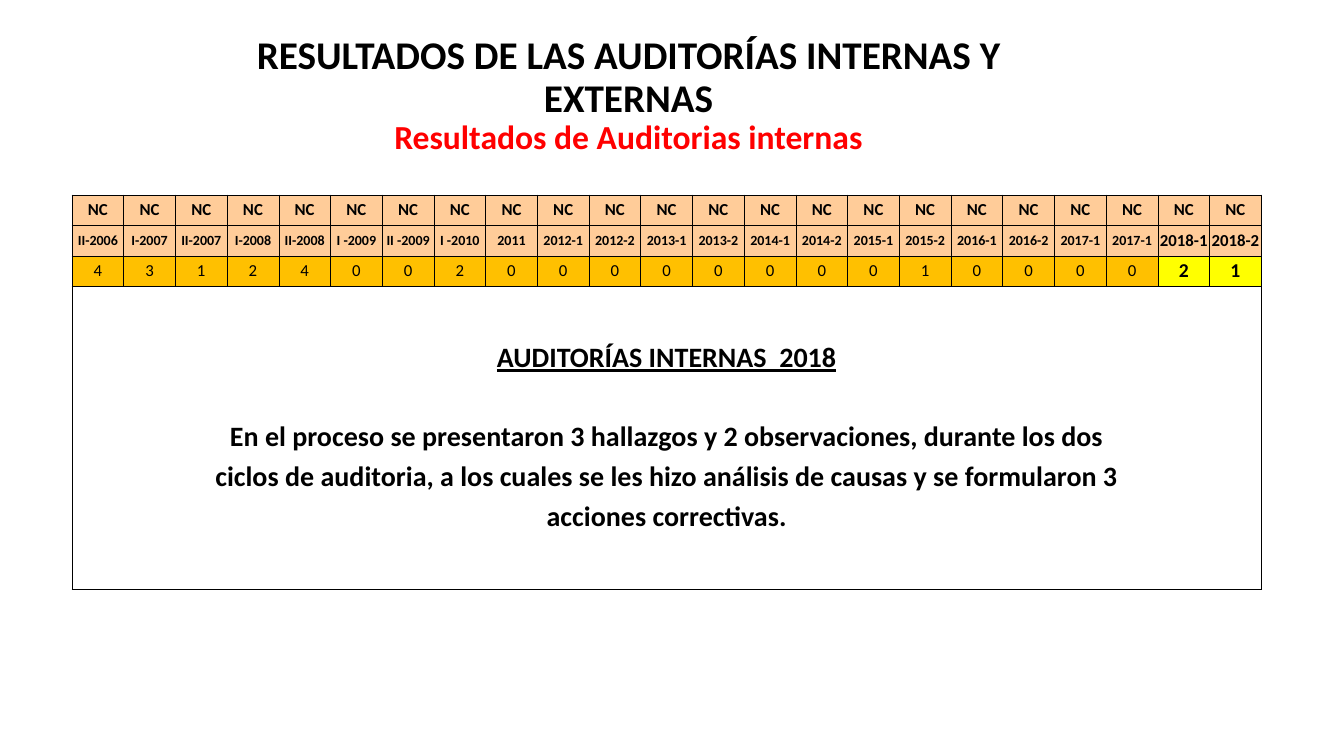
from lxml import etree
from pptx import Presentation
from pptx import util as u
from pptx.dml.color import RGBColor
from pptx.enum import text
from pptx.oxml.ns import qn

EMU_PER_PX = 914400 / 100.8
COLORS = {
    "black": "000000",
    "red": "FF0000",
    "peach": "FFCC99",
    "amber": "FFC000",
    "yellow": "FFFF00",
}
PERIODS = [
    "II-2006", "I-2007", "II-2007", "I-2008", "II-2008", "I -2009",
    "II -2009", "I -2010", "2011", "2012-1", "2012-2", "2013-1",
    "2013-2", "2014-1", "2014-2", "2015-1", "2015-2", "2016-1",
    "2016-2", "2017-1", "2017-1", "2018-1", "2018-2",
]
FINDINGS = [4, 3, 1, 2, 4, 0, 0, 2, 0, 0, 0, 0, 0, 0, 0, 0, 1, 0, 0, 0, 0, 2, 1]
SUMMARY = [
    "En el proceso se presentaron 3 hallazgos y 2 observaciones, durante los dos",
    "ciclos de auditoria, a los cuales se les hizo análisis de causas y se formularon 3",
    "acciones correctivas.",
]
ROW_HEIGHTS = [30, 31, 30, 303]
CURRENT_YEAR = "2018"


def px(length):
    return u.Emu(round(length * EMU_PER_PX))


def write(paragraph, content, size=12, color="black", bold=True, underline=False, before=0):
    paragraph.alignment = text.PP_ALIGN.CENTER
    paragraph.space_before = u.Pt(before)
    run = paragraph.add_run()
    run.text = content
    font = run.font
    font.name = "Calibri"
    font.size = u.Pt(size)
    font.bold = bold
    font.underline = underline
    font.color.rgb = RGBColor.from_string(COLORS[color])


def add_title(slide):
    title = slide.shapes.title
    title.left, title.top, title.width, title.height = map(px, (175, 97, 907, 65))
    frame = title.text_frame
    frame.word_wrap = True
    frame.auto_size = text.MSO_AUTO_SIZE.NONE
    frame.vertical_anchor = text.MSO_ANCHOR.BOTTOM
    paragraph = frame.paragraphs[0]
    paragraph.line_spacing = 0.9
    write(paragraph, "RESULTADOS DE LAS AUDITORÍAS INTERNAS Y EXTERNAS", size=28)
    paragraph.add_line_break()
    write(paragraph, "Resultados de Auditorias internas", size=24, color="red")


def format_cell(cell, fill=None):
    cell.margin_left = cell.margin_right = cell.margin_top = cell.margin_bottom = 0
    cell.vertical_anchor = text.MSO_ANCHOR.MIDDLE
    properties = cell._tc.get_or_add_tcPr()
    for side in ("a:lnL", "a:lnR", "a:lnT", "a:lnB"):
        line = etree.SubElement(properties, qn(side), w=str(u.Pt(0.5)))
        solid = etree.SubElement(line, qn("a:solidFill"))
        etree.SubElement(solid, qn("a:srgbClr"), val=COLORS["black"])
    if fill:
        cell.fill.solid()
        cell.fill.fore_color.rgb = RGBColor.from_string(COLORS[fill])
    else:
        cell.fill.background()


def fill_cell(cell, content, fill, **style):
    format_cell(cell, fill)
    write(cell.text_frame.paragraphs[0], content, **style)


def add_summary(table):
    last_row = len(ROW_HEIGHTS) - 1
    cell = table.cell(last_row, 0)
    cell.merge(table.cell(last_row, len(PERIODS) - 1))
    for column in range(len(PERIODS)):
        format_cell(table.cell(last_row, column))
    frame = cell.text_frame
    write(frame.paragraphs[0], "AUDITORÍAS INTERNAS  2018", size=20, underline=True)
    for index, sentence in enumerate(SUMMARY):
        write(frame.add_paragraph(), sentence, size=20, before=4 if index else 32)


def add_findings_table(slide):
    frame = slide.shapes.add_table(
        len(ROW_HEIGHTS), len(PERIODS), px(72), px(195), px(1190), px(sum(ROW_HEIGHTS))
    )
    table = frame.table
    table.first_row = table.horz_banding = False
    for row, height in zip(table.rows, ROW_HEIGHTS):
        row.height = px(height)
    for index, (period, count) in enumerate(zip(PERIODS, FINDINGS)):
        current = period.startswith(CURRENT_YEAR)
        table.columns[index].width = px(1190 / len(PERIODS))
        fill_cell(table.cell(0, index), "NC", "peach")
        fill_cell(table.cell(1, index), period, "peach", size=12 if current else 10)
        fill_cell(
            table.cell(2, index),
            str(count),
            "yellow" if current else "amber",
            size=14 if current else 12,
            bold=current,
        )
    add_summary(table)


def main():
    presentation = Presentation()
    presentation.slide_width, presentation.slide_height = px(1344), px(756)
    slide = presentation.slides.add_slide(presentation.slide_layouts[5])
    add_title(slide)
    add_findings_table(slide)
    presentation.save("out.pptx")


if __name__ == "__main__":
    main()
